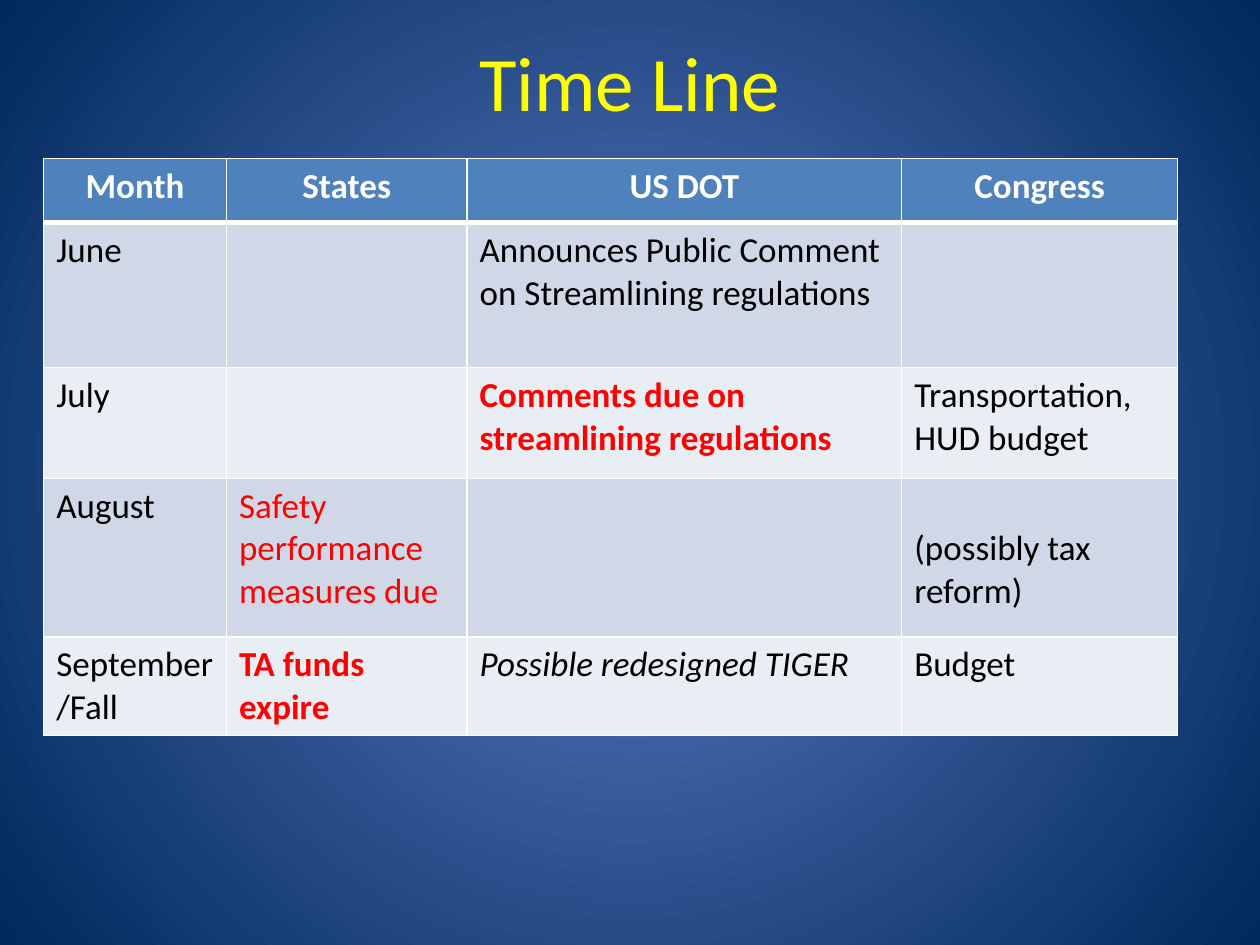
from lxml import etree
from pptx import Presentation
from pptx.dml.color import RGBColor
from pptx.enum import text
from pptx.oxml import ns
from pptx.util import Pt

WHITE = RGBColor(0xFF, 0xFF, 0xFF)
BLACK = RGBColor(0, 0, 0)
RED = RGBColor(0xFF, 0, 0)
YELLOW = RGBColor(0xFF, 0xFF, 0)
BLUE = RGBColor(0x4F, 0x81, 0xBD)
BANDS = [RGBColor(0xE9, 0xED, 0xF4), RGBColor(0xD0, 0xD8, 0xE8)]
GLOW = RGBColor(0x5E, 0x7C, 0xC5)
NAVY = RGBColor(0x00, 0x29, 0x5C)

COLS = [104.4, 137.5, 248.4, 157.7]
ROWS = [36.7, 82.8, 63.4, 90.7, 56.2]
HEADS = ["Month", "States", "US DOT", "Congress"]
PLAIN = {"color": BLACK}
DUE = {"color": RED, "bold": True}
BODY = [
    [("June", PLAIN), None,
     ("Announces Public Comment on Streamlining regulations", PLAIN), None],
    [("July", PLAIN), None,
     ("Comments due on streamlining regulations", DUE),
     ("Transportation, HUD budget", PLAIN)],
    [("August", PLAIN), ("Safety performance measures due", {"color": RED}),
     None, ("(possibly tax reform)", {"color": BLACK, "drop": 24.4})],
    [("September/Fall", PLAIN), ("TA funds expire", DUE),
     ("Possible redesigned TIGER", {"color": BLACK, "italic": True}),
     ("Budget", PLAIN)],
]


class Deck:
    font = "Calibri"
    size = 20
    pad = 3.6

    def __init__(self, slide):
        self.slide = slide

    def backdrop(self, inner, outer):
        fill = self.slide.background.fill
        fill.gradient()
        for stop, color in zip(fill.gradient_stops, (inner, outer)):
            stop.color.rgb = color
        grad = self.slide.background._cSld.find(".//" + ns.qn("a:gradFill"))
        grad.remove(grad.find(ns.qn("a:lin")))
        mode = etree.SubElement(grad, ns.qn("a:path"), path="circle")
        etree.SubElement(mode, ns.qn("a:fillToRect"),
                         l="50000", t="50000", r="50000", b="50000")

    def words(self, para, label, color, size=None, bold=False, italic=False):
        run = para.add_run()
        run.text = label
        font = run.font
        font.name, font.size = self.font, Pt(size or self.size)
        font.bold, font.italic = bold, italic
        font.color.rgb = color

    def title(self, label, left, top, width, height):
        box = self.slide.shapes.title
        box.left, box.top = Pt(left), Pt(top)
        box.width, box.height = Pt(width), Pt(height)
        frame = box.text_frame
        frame.vertical_anchor = text.MSO_ANCHOR.MIDDLE
        para = frame.paragraphs[0]
        para.alignment = text.PP_ALIGN.CENTER
        self.words(para, label, YELLOW, 44)

    def border(self, cell, top, bottom):
        props = cell._tc.get_or_add_tcPr()
        sides = [("L", 1), ("R", 1), ("T", top), ("B", bottom)]
        for spot, (side, width) in enumerate(sides):
            line = etree.Element(ns.qn("a:ln" + side), w=str(int(Pt(width))))
            fill = etree.SubElement(line, ns.qn("a:solidFill"))
            etree.SubElement(fill, ns.qn("a:srgbClr"), val=str(WHITE))
            props.insert(spot, line)

    def cell(self, cell, item, fill, head=False, under=False):
        cell.fill.solid()
        cell.fill.fore_color.rgb = fill
        self.border(cell, 3 if under else 1, 3 if head else 1)
        if item is None:
            return
        label, look = item
        look = dict(look)
        cell.margin_top = Pt(self.pad + look.pop("drop", 0))
        para = cell.text_frame.paragraphs[0]
        if head:
            para.alignment = text.PP_ALIGN.CENTER
        self.words(para, label, **look)

    def table(self, left, top, cols, rows, heads, body):
        grid = self.slide.shapes.add_table(
            len(rows), len(cols), Pt(left), Pt(top),
            Pt(sum(cols)), Pt(sum(rows))).table
        for col, width in zip(grid.columns, cols):
            col.width = Pt(width)
        for row, height in zip(grid.rows, rows):
            row.height = Pt(height)
        for c, name in enumerate(heads):
            look = {"color": WHITE, "bold": True}
            self.cell(grid.cell(0, c), (name, look), BLUE, head=True)
        for r, items in enumerate(body, 1):
            for c, item in enumerate(items):
                self.cell(grid.cell(r, c), item, BANDS[r % 2], under=r == 1)


def main():
    show = Presentation()
    show.slide_width, show.slide_height = Pt(720), Pt(540)
    deck = Deck(show.slides.add_slide(show.slide_layouts[5]))
    deck.backdrop(GLOW, NAVY)
    deck.title("Time Line", 36, 0.9, 648, 90)
    deck.table(25, 90.5, COLS, ROWS, HEADS, BODY)
    show.save("out.pptx")


if __name__ == "__main__":
    main()
